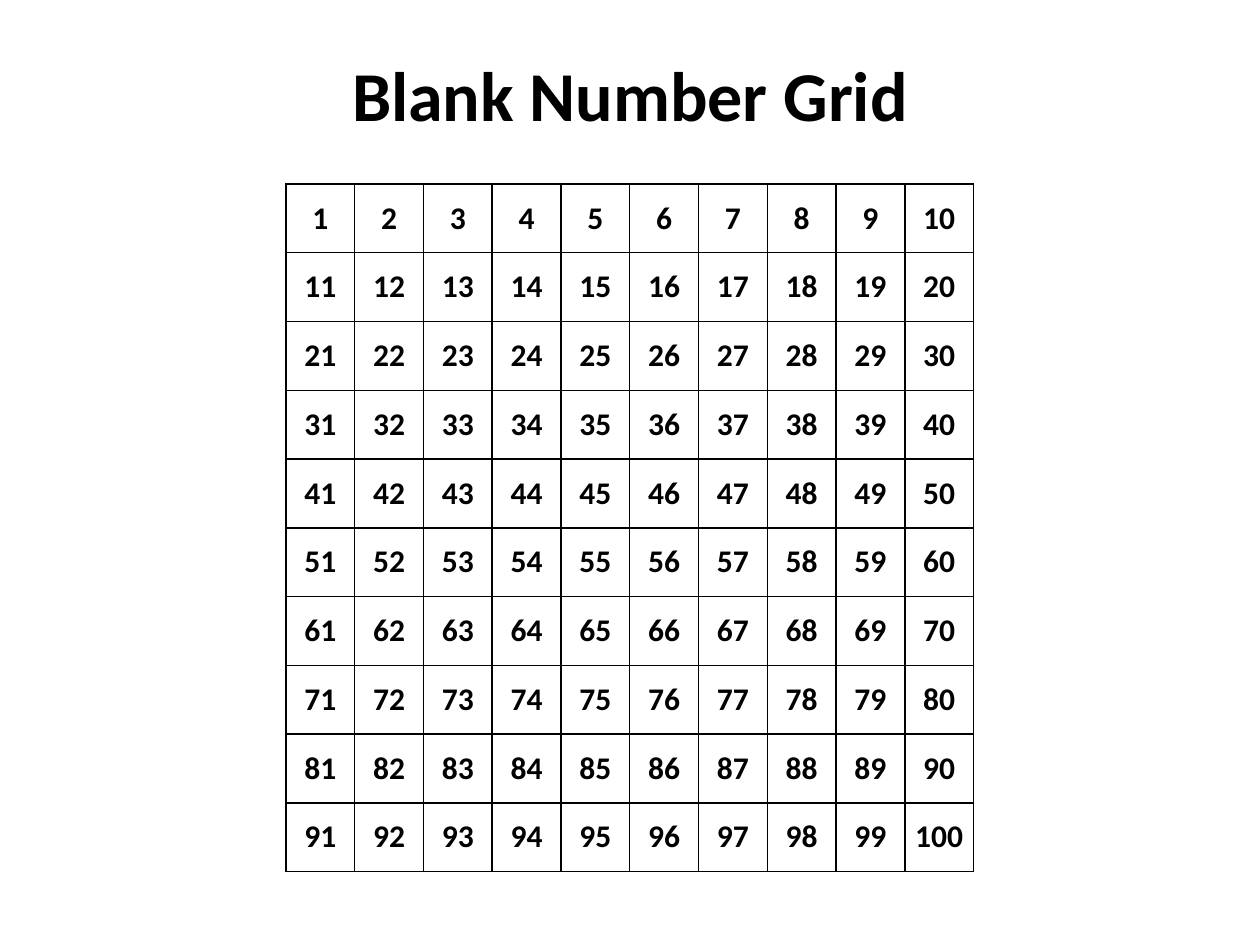
from lxml import etree
from pptx import Presentation
from pptx import util as u
from pptx.dml import color
from pptx.enum import text
from pptx.oxml import ns

PX = 914400 // 126


def rgb(value):
    return color.RGBColor.from_string(value)


def write(tf, content, size=18, font="Calibri", ink="000000", bold=True, inset=(0, 0)):
    tf.word_wrap = True
    tf.vertical_anchor = text.MSO_ANCHOR.MIDDLE
    tf.margin_left = tf.margin_right = inset[0] * PX
    tf.margin_top = tf.margin_bottom = inset[1] * PX
    p = tf.paragraphs[0]
    p.alignment = text.PP_ALIGN.CENTER
    r = p.add_run()
    r.text = content
    r.font.size = u.Pt(size)
    r.font.name = font
    r.font.bold = bold
    r.font.color.rgb = rgb(ink)


class Deck:
    ink = "000000"
    border = u.Pt(1)

    def __init__(self, width, height):
        self.prs = Presentation()
        self.prs.slide_width = width * PX
        self.prs.slide_height = height * PX
        self.slide = self.prs.slides.add_slide(self.prs.slide_layouts[5])

    def title(self, content, x, y, w, h):
        sp = self.slide.shapes.title
        sp.left, sp.top, sp.width, sp.height = (v * PX for v in (x, y, w, h))
        write(sp.text_frame, content, size=40, ink=self.ink, inset=(13, 6))

    def outline(self, cell):
        tc_pr = cell._tc.get_or_add_tcPr()
        for i, side in enumerate(("lnL", "lnR", "lnT", "lnB")):
            ln = etree.Element(ns.qn(f"a:{side}"), w=str(self.border))
            fill = etree.SubElement(ln, ns.qn("a:solidFill"))
            etree.SubElement(fill, ns.qn("a:srgbClr"), val=self.ink)
            tc_pr.insert(i, ln)

    def number_grid(self, x, y, size, count):
        frame = self.slide.shapes.add_table(
            count, count, x * PX, y * PX, size * PX, size * PX)
        table = frame.table
        table.first_row = table.horz_banding = False
        for line in (*table.columns, *table.rows):
            if hasattr(line, "width"):
                line.width = size * PX // count
            else:
                line.height = size * PX // count
        for number, cell in enumerate(table.iter_cells(), 1):
            cell.fill.background()
            self.outline(cell)
            cell.margin_left = cell.margin_right = 8 * PX
            cell.margin_top = cell.margin_bottom = 0
            cell.vertical_anchor = text.MSO_ANCHOR.MIDDLE
            write(cell.text_frame, str(number), ink=self.ink)


def main():
    deck = Deck(1260, 945)
    deck.number_grid(286, 184, 688, 10)
    deck.title("Blank Number Grid", 63, 38, 1134, 112)
    deck.prs.save("out.pptx")


if __name__ == "__main__":
    main()
